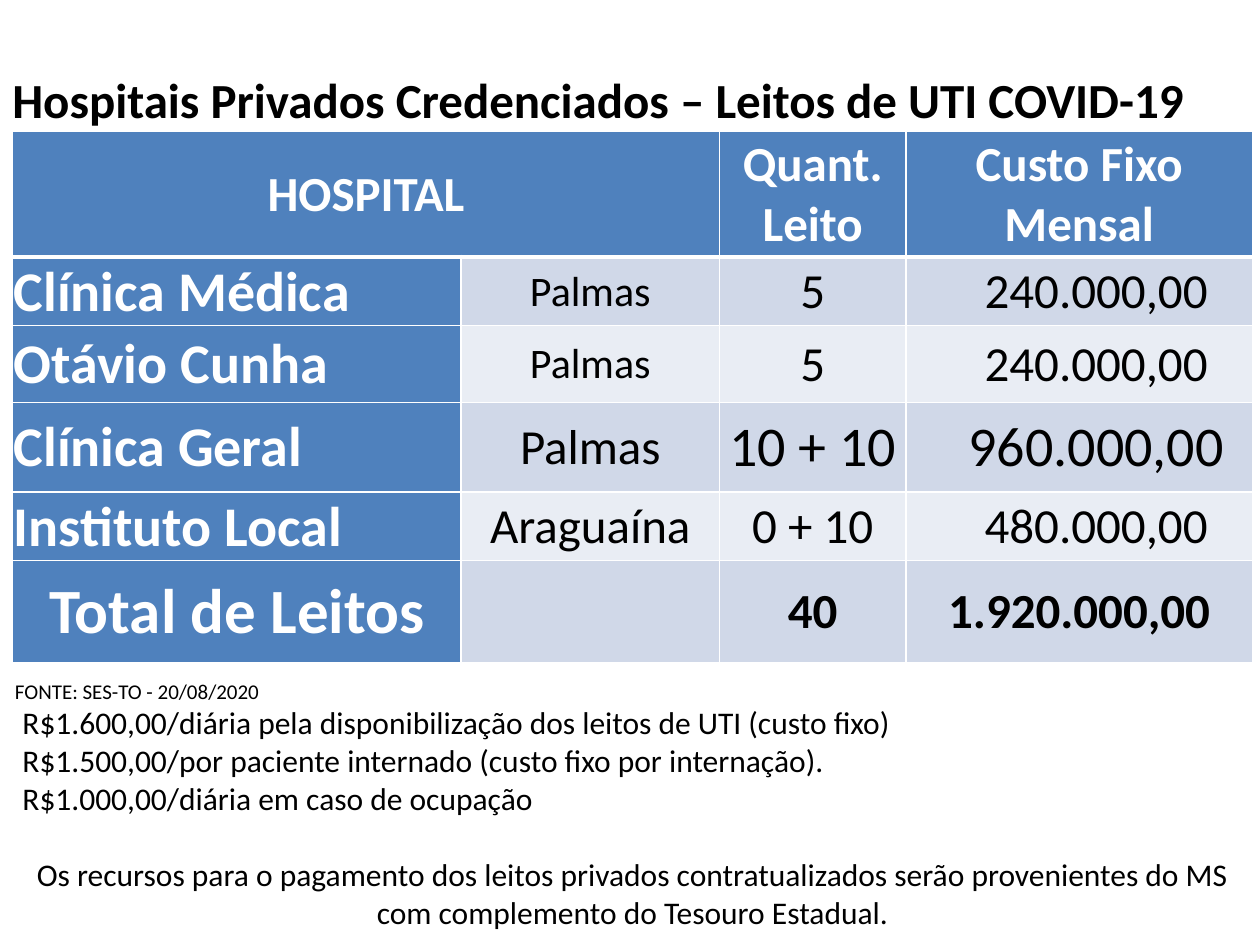
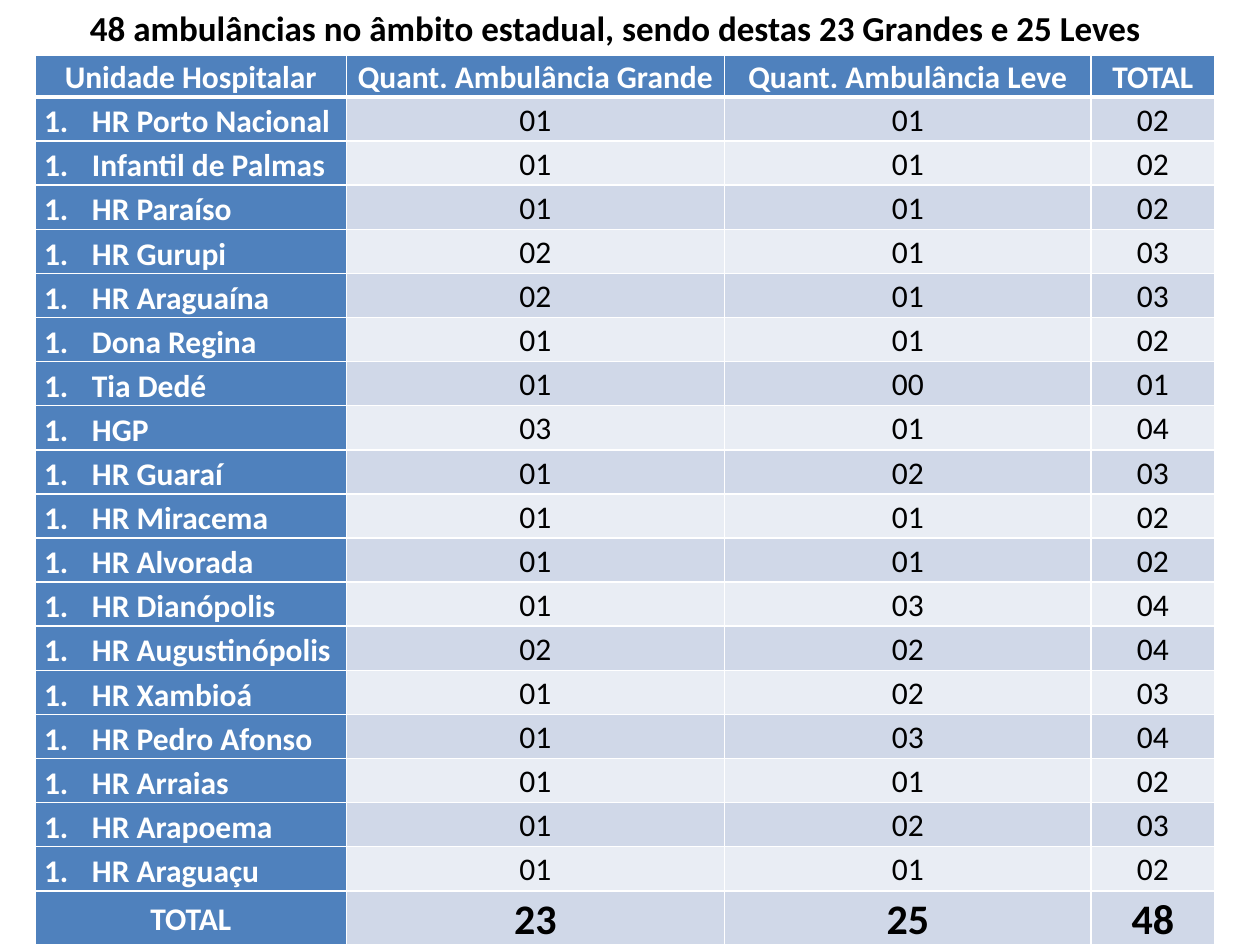
from collections import namedtuple

from lxml import etree
from pptx import Presentation
from pptx.dml.color import RGBColor
from pptx.enum.text import MSO_ANCHOR, PP_ALIGN
from pptx.oxml.ns import qn
from pptx.util import Inches, Pt

LEFT, CENTER, JUSTIFY = PP_ALIGN.LEFT, PP_ALIGN.CENTER, PP_ALIGN.JUSTIFY
MIDDLE = MSO_ANCHOR.MIDDLE
FONT = "Calibri"
BLUE, BAND_DARK, BAND_LIGHT = "4F81BD", "D0D8E8", "E9EDF4"
WHITE, BLACK = "FFFFFF", "000000"
COLUMNS, ROWS, UNIT = 100, 75, 0.1

Box = namedtuple("Box", "left top width height")
SLIDE = Box(0, 0, COLUMNS, ROWS)

HOSPITAL_ROWS = [
    ("Clínica Médica", "Palmas", "5", "240.000,00"),
    ("Otávio Cunha", "Palmas", "5", "240.000,00"),
    ("Clínica Geral", "Palmas", "10 + 10", "960.000,00"),
    ("Instituto Local", "Araguaína", "0 + 10", "480.000,00"),
    ("Total de Leitos", "", "40", "1.920.000,00"),
]
HOSPITAL_SIZES = [
    (32, 24, 28, 28), (32, 24, 28, 28), (32, 28, 32, 32), (32, 28, 28, 28), (36, 28, 28, 28),
]
COST_RULES = [
    "R$1.600,00/diária pela disponibilização dos leitos de UTI (custo fixo)",
    "R$1.500,00/por paciente internado (custo fixo por internação).",
    "R$1.000,00/diária em caso de ocupação",
]
FUNDING = ("Os recursos para o pagamento dos leitos privados contratualizados serão "
           "provenientes do MS com complemento do Tesouro Estadual.")
AMBULANCES = [
    ("HR Porto Nacional", 1, 1), ("Infantil de Palmas", 1, 1), ("HR Paraíso", 1, 1),
    ("HR Gurupi", 2, 1), ("HR Araguaína", 2, 1), ("Dona Regina", 1, 1),
    ("Tia Dedé", 1, 0), ("HGP", 3, 1), ("HR Guaraí", 1, 2), ("HR Miracema", 1, 1),
    ("HR Alvorada", 1, 1), ("HR Dianópolis", 1, 3), ("HR Augustinópolis", 2, 2),
    ("HR Xambioá", 1, 2), ("HR Pedro Afonso", 1, 3), ("HR Arraias", 1, 1),
    ("HR Arapoema", 1, 2), ("HR Araguaçu", 1, 1),
]


def color(value):
    """Turn a hex string into a colour."""
    return RGBColor.from_string(value)


def within(box, left, top, width, height):
    """Return a box placed relative to another box, in grid units."""
    return Box(box.left + left, box.top + top, width, height)


def lengths(box):
    """Turn a grid box into slide lengths."""
    return [Inches(value * UNIT) for value in box]


def write(para, text, size=18, ink=BLACK, bold=False, align=LEFT, spacing=None, before=0):
    """Write one formatted run into a paragraph."""
    para.alignment = align
    para.space_before = Pt(before)
    if spacing:
        para.line_spacing = spacing
    if text:
        span = para.add_run()
        span.text = text
        font = span.font
        font.name, font.size, font.bold = FONT, Pt(size), bold
        font.color.rgb = color(ink)


def add_text(page, box, lines):
    """Add a text box from pairs of text and format."""
    frame = page.shapes.add_textbox(*lengths(box)).text_frame
    frame.word_wrap = True
    for index, (text, style) in enumerate(lines):
        para = frame.add_paragraph() if index else frame.paragraphs[0]
        write(para, text, **style)


def add_borders(cell, row):
    """Draw white cell borders, thick below the header."""
    edges = {"L": 1, "R": 1, "T": 3 if row == 1 else 1, "B": 3 if row == 0 else 1}
    properties = cell._tc.get_or_add_tcPr()
    for side, width in edges.items():
        line = etree.SubElement(properties, qn(f"a:ln{side}"), w=str(Pt(width)))
        fill = etree.SubElement(line, qn("a:solidFill"))
        etree.SubElement(fill, qn("a:srgbClr"), val=WHITE)


def add_number(para, indent):
    """Number a paragraph with a hanging indent."""
    properties = para._p.get_or_add_pPr()
    properties.set("marL", str(Inches(indent)))
    properties.set("indent", str(-Inches(indent)))
    etree.SubElement(properties, qn("a:buFont"), typeface="+mj-lt")
    etree.SubElement(properties, qn("a:buAutoNum"), type="arabicPeriod")


def add_grid(page, box, widths, heights):
    """Add a banded table with a blue header row and first column."""
    table = page.shapes.add_table(len(heights), len(widths), *lengths(box)).table
    for column, width in zip(table.columns, widths):
        column.width = Inches(width * UNIT)
    for row, height in zip(table.rows, heights):
        row.height = Inches(height * UNIT)
    for row in range(len(heights)):
        for column in range(len(widths)):
            cell = table.cell(row, column)
            add_borders(cell, row)
            cell.fill.solid()
            band = BAND_DARK if row % 2 else BAND_LIGHT
            cell.fill.fore_color.rgb = color(BLUE if row == 0 or column == 0 else band)
    return table


def fill_cell(cell, text, margins, **style):
    """Write a vertically centred cell and return its paragraph."""
    cell.vertical_anchor = MIDDLE
    cell.margin_left, cell.margin_top, cell.margin_right, cell.margin_bottom = map(Inches, margins)
    para = cell.text_frame.paragraphs[0]
    write(para, text, **style)
    return para


def hospital_table(page, box):
    """Place the table of private hospitals, beds and monthly costs."""
    table = add_grid(page, box, [35.6, 20.5, 14.8, 27.5], [10, 5.3, 6.1, 7.1, 5.3, 8.1])
    table.cell(0, 0).merge(table.cell(0, 1))
    margins = (0.01, 0.01, 0.01, 0)
    for column, text in ((0, "HOSPITAL"), (2, "Quant. Leito"), (3, "Custo Fixo Mensal")):
        fill_cell(table.cell(0, column), text, margins,
                  size=28, ink=WHITE, bold=True, align=CENTER)
    last = len(HOSPITAL_ROWS)
    for row, (texts, sizes) in enumerate(zip(HOSPITAL_ROWS, HOSPITAL_SIZES), 1):
        for column, (text, size) in enumerate(zip(texts, sizes)):
            name, total = column == 0, row == last
            shifted = column == 3 and not total
            fill_cell(table.cell(row, column), text, (0.28, *margins[1:]) if shifted else margins,
                      size=size, ink=WHITE if name else BLACK, bold=name or total,
                      align=LEFT if name and not total else CENTER)


def hospital_page(page, box):
    """Place the slide on accredited private hospitals."""
    add_text(page, within(box, 0, 5, 99.4, 5.7),
             [("Hospitais Privados Credenciados – Leitos de UTI COVID-19", dict(size=28, bold=True))])
    rules = [(text, dict(align=JUSTIFY)) for text in COST_RULES]
    add_text(page, within(box, 0.8, 55.3, 98.8, 19.2),
             rules + [(FUNDING, dict(align=CENTER, before=22))])
    hospital_table(page, within(box, 1, 10.4, 98.5, 42.1))
    add_text(page, within(box, 0.2, 53.4, 38.8, 3),
             [("FONTE: SES-TO - 20/08/2020", dict(size=12, align=JUSTIFY))])


def ambulance_table(page, box):
    """Place the table of ambulances per hospital unit with totals."""
    heights = [3.3] + [3.5] * len(AMBULANCES) + [4.3]
    table = add_grid(page, box, [24.7, 30, 29.1, 9.8], heights)
    header = ("Unidade Hospitalar", "Quant. Ambulância Grande", "Quant. Ambulância Leve", "TOTAL")
    large_total = sum(large for _, large, _ in AMBULANCES)
    light_total = sum(light for _, _, light in AMBULANCES)
    records = [*AMBULANCES, ("TOTAL", large_total, light_total)]
    body = [(name, f"{large:02}", f"{light:02}", f"{large + light:02}")
            for name, large, light in records]
    last = len(body)
    for row, texts in enumerate([header, *body]):
        for column, text in enumerate(texts):
            blue = row == 0 or column == 0
            numbered = column == 0 and 0 < row < last
            para = fill_cell(table.cell(row, column), text, (0.07, 0, 0.07, 0),
                             size=24 if row == last and column else 18,
                             ink=WHITE if blue else BLACK, bold=blue or row == last,
                             align=LEFT if numbered else CENTER,
                             spacing=1.15 if numbered else 1.07)
            if numbered:
                add_number(para, 0.38)


def ambulance_page(page, box):
    """Place the slide on ambulances in the state."""
    ambulance_table(page, within(box, 2.8, 4.4, 93.7, 70.6))
    add_text(page, within(box, 2, 0, 93.7, 4.4),
             [("48 ambulâncias no âmbito estadual, sendo destas 23 Grandes e 25 Leves",
               dict(size=20, bold=True, align=CENTER))])


def main():
    """Build and save the deck."""
    deck = Presentation()
    deck.slide_width, deck.slide_height = Inches(COLUMNS * UNIT), Inches(ROWS * UNIT)
    for build in (hospital_page, ambulance_page):
        build(deck.slides.add_slide(deck.slide_layouts[6]), SLIDE)
    deck.save("out.pptx")


if __name__ == "__main__":
    main()
